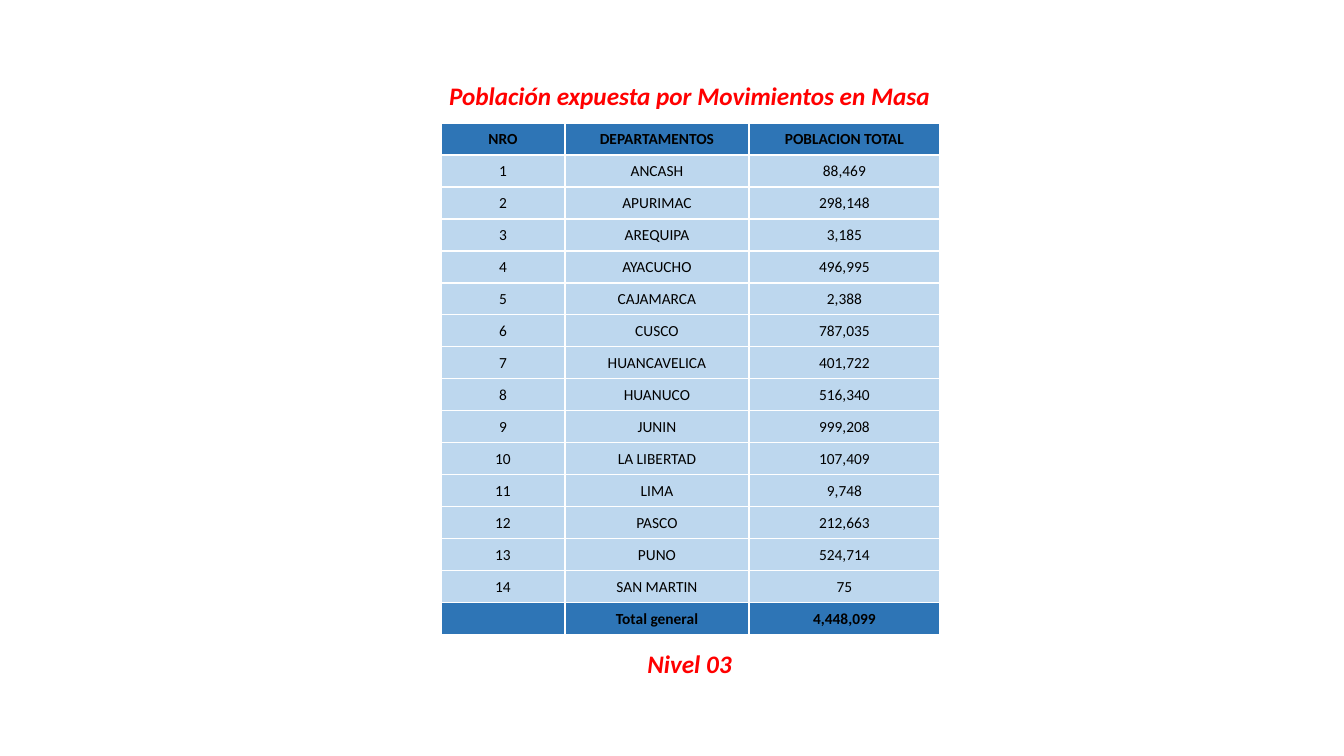
from dataclasses import dataclass

from lxml import etree
from pptx import Presentation, util as u
from pptx.dml import color
from pptx.enum import text as t
from pptx.oxml import ns
from pptx.shapes.base import BaseShape
from pptx.slide import Slide
from pptx.table import _Cell as Cell
from pptx.text.text import TextFrame

EMU_PER_PX = 914400 / 100.8


@dataclass(frozen=True)
class Theme:
    font: str = "Calibri"
    caption_size: int = 18
    cell_size: int = 11
    caption: str = "FF0000"
    ink: str = "000000"
    band: str = "2E75B6"
    body: str = "BDD7EE"
    border: str = "FFFFFF"
    border_width: int = 1


@dataclass(frozen=True)
class Box:
    left: int
    top: int
    width: int
    height: int


@dataclass(frozen=True)
class Department:
    name: str
    population: int


THEME = Theme()
TITLE_BOX = Box(436, 75, 507, 40)
LEVEL_BOX = Box(634, 643, 111, 40)
TABLE_LEFT, TABLE_TOP, ROW_HEIGHT = 441, 123, 32
COLUMN_WIDTHS = (124, 184, 191)
HEADINGS = ("NRO", "DEPARTAMENTOS", "POBLACION TOTAL")
DEPARTMENTS = (
    Department("ANCASH", 88469),
    Department("APURIMAC", 298148),
    Department("AREQUIPA", 3185),
    Department("AYACUCHO", 496995),
    Department("CAJAMARCA", 2388),
    Department("CUSCO", 787035),
    Department("HUANCAVELICA", 401722),
    Department("HUANUCO", 516340),
    Department("JUNIN", 999208),
    Department("LA LIBERTAD", 107409),
    Department("LIMA", 9748),
    Department("PASCO", 212663),
    Department("PUNO", 524714),
    Department("SAN MARTIN", 75),
)


def px(length: int) -> u.Emu:
    return u.Emu(round(length * EMU_PER_PX))


def write(frame: TextFrame, content: str, *, size: int, ink: str,
          bold: bool = False, italic: bool = False) -> None:
    paragraph = frame.paragraphs[0]
    paragraph.alignment = t.PP_ALIGN.CENTER
    if not content:
        return
    run = paragraph.add_run()
    run.text = content
    run.font.name = THEME.font
    run.font.size = u.Pt(size)
    run.font.bold = bold
    run.font.italic = italic
    run.font.color.rgb = color.RGBColor.from_string(ink)


def place_caption(shape: BaseShape, box: Box, content: str, *, wrap: bool) -> None:
    shape.left, shape.top = px(box.left), px(box.top)
    shape.width, shape.height = px(box.width), px(box.height)
    frame = shape.text_frame
    frame.word_wrap = wrap
    frame.auto_size = t.MSO_AUTO_SIZE.SHAPE_TO_FIT_TEXT
    frame.vertical_anchor = t.MSO_ANCHOR.TOP
    write(frame, content, size=THEME.caption_size, ink=THEME.caption,
          bold=True, italic=True)


def add_borders(cell: Cell) -> None:
    properties = cell._tc.get_or_add_tcPr()
    for side in ("lnL", "lnR", "lnT", "lnB"):
        line = etree.SubElement(properties, ns.qn(f"a:{side}"),
                                w=str(u.Pt(THEME.border_width)))
        fill = etree.SubElement(line, ns.qn("a:solidFill"))
        etree.SubElement(fill, ns.qn("a:srgbClr"), val=THEME.border)


def format_cell(cell: Cell, content: str, *, emphasis: bool) -> None:
    cell.margin_left = cell.margin_right = cell.margin_top = u.Inches(0.01)
    cell.margin_bottom = 0
    cell.vertical_anchor = t.MSO_ANCHOR.MIDDLE
    add_borders(cell)
    cell.fill.solid()
    fill = THEME.band if emphasis else THEME.body
    cell.fill.fore_color.rgb = color.RGBColor.from_string(fill)
    write(cell.text_frame, content, size=THEME.cell_size, ink=THEME.ink,
          bold=emphasis)


def add_population_table(slide: Slide) -> None:
    total = sum(department.population for department in DEPARTMENTS)
    rows = [
        HEADINGS,
        *((str(number), department.name, f"{department.population:,}")
          for number, department in enumerate(DEPARTMENTS, 1)),
        ("", "Total general", f"{total:,}"),
    ]
    table = slide.shapes.add_table(
        len(rows), len(HEADINGS), px(TABLE_LEFT), px(TABLE_TOP),
        px(sum(COLUMN_WIDTHS)), px(ROW_HEIGHT * len(rows))).table
    table.horz_banding = False
    for column, width in zip(table.columns, COLUMN_WIDTHS):
        column.width = px(width)
    for index, values in enumerate(rows):
        table.rows[index].height = px(ROW_HEIGHT)
        for position, value in enumerate(values):
            format_cell(table.cell(index, position), value,
                        emphasis=index in (0, len(rows) - 1))


def main() -> None:
    presentation = Presentation()
    presentation.slide_width, presentation.slide_height = px(1344), px(756)
    slide = presentation.slides.add_slide(presentation.slide_layouts[5])
    place_caption(slide.shapes.title, TITLE_BOX,
                  "Población expuesta por Movimientos en Masa", wrap=False)
    level = slide.shapes.add_textbox(0, 0, 0, 0)
    place_caption(level, LEVEL_BOX, "Nivel 03", wrap=True)
    add_population_table(slide)
    presentation.save("out.pptx")


if __name__ == "__main__":
    main()
